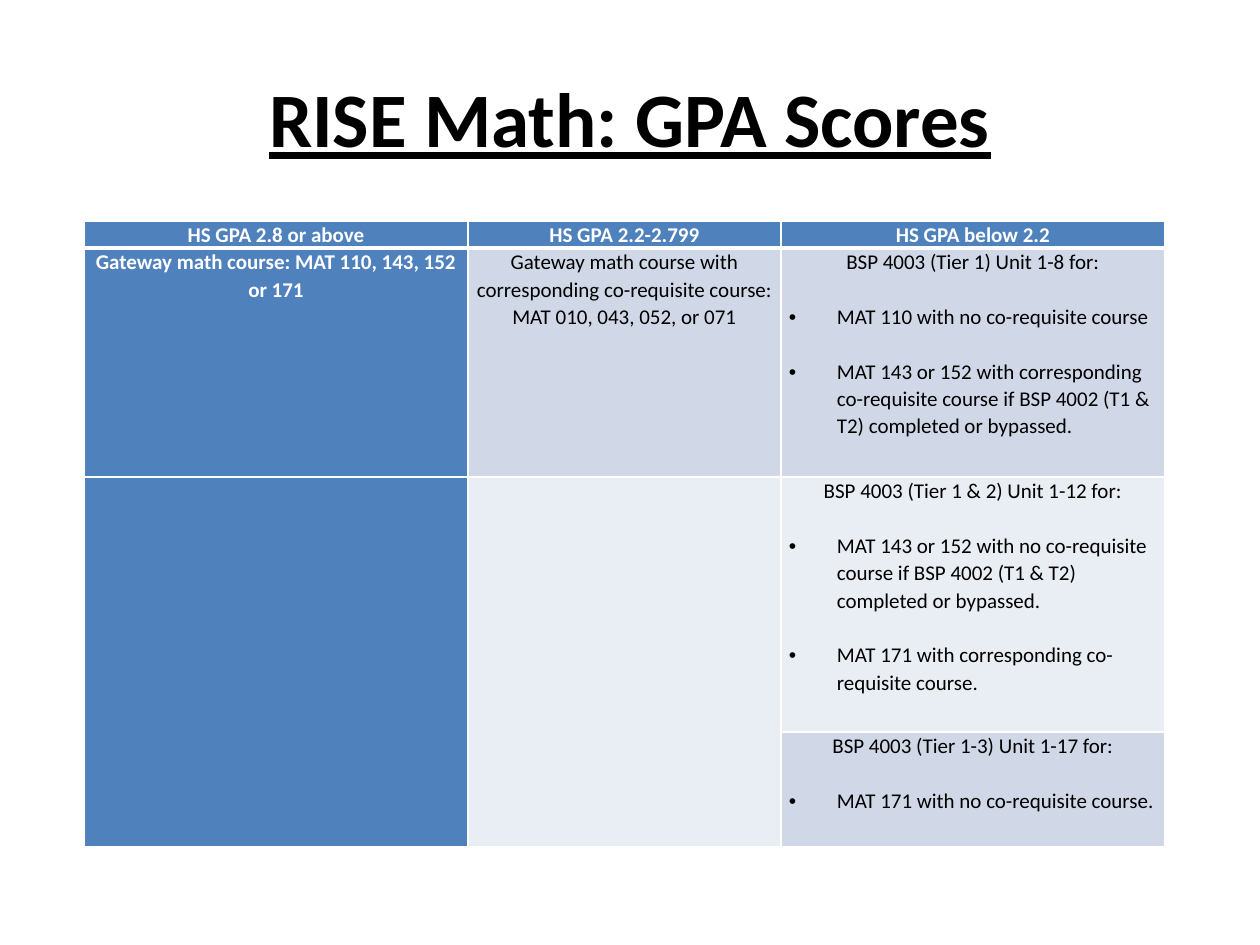
import pptx
import pptx.util
import pptx.dml.color
import pptx.enum.text
import pptx.oxml
import pptx.oxml.ns

PX = 914400 // 126
FONT = "Calibri"
BLUE, MID, PALE = "4F81BD", "D0D8E8", "E9EDF4"
WHITE, BLACK = "FFFFFF", "000000"
COLS = [384, 313, 384]
ROWS = [25, 229, 255, 115]
FILLS = [[BLUE] * 3, [BLUE, MID, MID], [BLUE, PALE, PALE], [BLUE, PALE, MID]]
HEADS = ["HS GPA 2.8 or above", "HS GPA 2.2-2.799", "HS GPA below 2.2"]
GATE = [
    "Gateway math course: MAT 110, 143, 152 or 171",
    "Gateway math course with corresponding co-requisite course: "
    "MAT 010, 043, 052, or 071",
]
TIERS = [
    ["BSP 4003 (Tier 1) Unit 1-8 for:",
     "MAT 110 with no co-requisite course",
     "MAT 143 or 152 with corresponding co-requisite course "
     "if BSP 4002 (T1 & T2) completed or bypassed."],
    ["BSP 4003 (Tier 1 & 2) Unit 1-12 for:",
     "MAT 143 or 152 with no co-requisite course "
     "if BSP 4002 (T1 & T2) completed or bypassed.",
     "MAT 171 with corresponding co-requisite course."],
    ["BSP 4003 (Tier 1-3) Unit 1-17 for:",
     "MAT 171 with no co-requisite course."],
]


def px(n):
    return pptx.util.Emu(n * PX)


def color(code):
    return pptx.dml.color.RGBColor.from_string(code)


def style(para, size, code, bold):
    font = para.font
    font.name = FONT
    font.size = pptx.util.Pt(size)
    font.bold = bold
    font.color.rgb = color(code)


def center(para):
    para.alignment = pptx.enum.text.PP_ALIGN.CENTER


def bullet(para):
    props = para._p.get_or_add_pPr()
    props.set("marL", str(px(48)))
    props.set("indent", str(-px(48)))
    space = pptx.oxml.ns.nsdecls("a")
    for xml in (f'<a:buFont {space} typeface="Arial"/>',
                f'<a:buChar {space} char="•"/>'):
        props.append(pptx.oxml.parse_xml(xml))
    para.space_before = pptx.util.Pt(15.6)


def border(cell, side, width):
    cell._tc.get_or_add_tcPr().append(pptx.oxml.parse_xml(
        f'<a:ln{side} {pptx.oxml.ns.nsdecls("a")} w="{pptx.util.Pt(width)}">'
        f'<a:solidFill><a:srgbClr val="{WHITE}"/></a:solidFill></a:ln{side}>'))


def frame(cell, row, fill):
    heavy = {0: "B", 1: "T"}.get(row)
    for side in "LRTB":
        border(cell, side, 3 if side == heavy else 1)
    cell.fill.solid()
    cell.fill.fore_color.rgb = color(fill)
    cell.margin_left = cell.margin_right = px(8)
    cell.margin_top = cell.margin_bottom = 0


def write(cell, lines, code, bold):
    cell.text = "\n".join(lines)
    for i, para in enumerate(cell.text_frame.paragraphs):
        if i:
            bullet(para)
        else:
            center(para)
        para.line_spacing = 1.07
        style(para, 12, code, bold)


def title(slide, text):
    box = slide.shapes.add_textbox(px(63), px(38), px(1134), px(158))
    body = box.text_frame
    body.word_wrap = True
    body.vertical_anchor = pptx.enum.text.MSO_ANCHOR.MIDDLE
    para = body.paragraphs[0]
    para.text = text
    center(para)
    style(para, 44, BLACK, True)
    para.font.underline = True


def table(slide):
    grid = slide.shapes.add_table(
        len(ROWS), len(COLS), px(84), px(221), px(sum(COLS)), px(sum(ROWS))).table
    for col, width in zip(grid.columns, COLS):
        col.width = px(width)
    for row, height in zip(grid.rows, ROWS):
        row.height = px(height)
    for r, fills in enumerate(FILLS):
        for c, fill in enumerate(fills):
            frame(grid.cell(r, c), r, fill)
    for c, text in enumerate(HEADS):
        write(grid.cell(0, c), [text], WHITE, True)
    for c, text in enumerate(GATE):
        write(grid.cell(1, c), [text], BLACK if c else WHITE, not c)
        grid.cell(2, c).merge(grid.cell(3, c))
    for r, lines in enumerate(TIERS, 1):
        write(grid.cell(r, 2), lines, BLACK, False)


def main():
    deck = pptx.Presentation()
    deck.slide_width, deck.slide_height = px(1260), px(945)
    slide = deck.slides.add_slide(deck.slide_layouts[6])
    title(slide, "RISE Math: GPA Scores")
    table(slide)
    deck.save("out.pptx")


if __name__ == "__main__":
    main()
